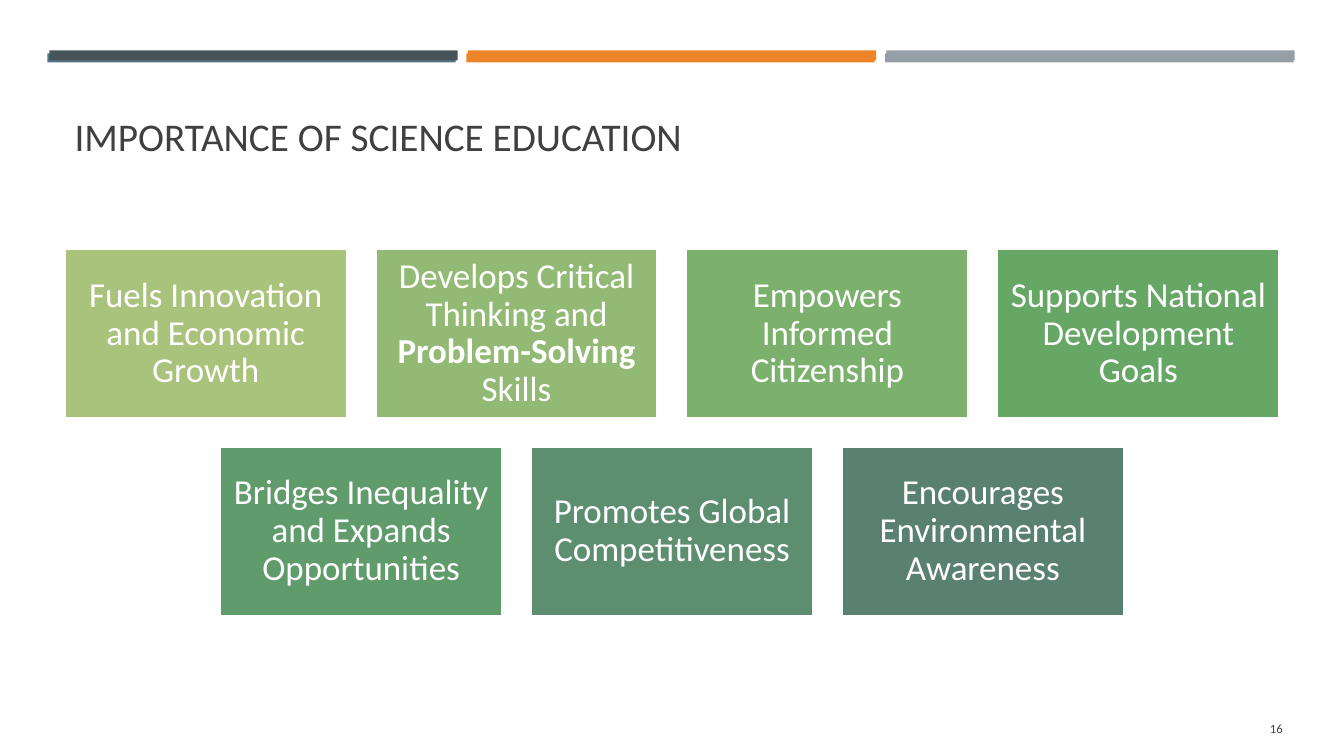
"""Builds the slide on the importance of science education."""
import dataclasses

import pptx
import pptx.dml.color
import pptx.enum.shapes
import pptx.enum.text
import pptx.util

ALIGN = pptx.enum.text.PP_ALIGN
ANCHOR = pptx.enum.text.MSO_ANCHOR


@dataclasses.dataclass(frozen=True)
class Theme:
    """Holds the colours, font and type sizes."""
    font: str = "Calibri"
    ink: str = "404040"
    paper: str = "FFFFFF"
    back_bars: tuple = ("537685", "ED8428", "969FA7")
    front_bars: tuple = ("465359", "ED8428", "969FA7")
    cards: tuple = ("A9C37C", "92BA74", "7BB16C", "66A765", "609C6B", "5D8E70", "5A8071")
    title_size: int = 28
    card_size: int = 25
    number_size: int = 9
    outline: float = 1.75


@dataclasses.dataclass(frozen=True)
class Grid:
    """Places equal cells, with all lengths in inches."""
    left: float
    top: float
    right: float
    columns: int
    width: float
    height: float
    row_gap: float = 0

    def cell(self, column, row=0):
        """Returns the left, top, width and height of a cell."""
        column_step = (self.right - self.left - self.width) / (self.columns - 1)
        return (self.left + column * column_step,
                self.top + row * (self.height + self.row_gap), self.width, self.height)


class SlideBuilder:
    """Draws styled elements on the current slide."""

    def __init__(self, presentation, theme):
        """Adds a title-only slide."""
        self.theme = theme
        self.slide = presentation.slides.add_slide(presentation.slide_layouts[5])

    def style_frame(self, frame, size, colour, alignment, anchor, inset):
        """Applies the type style to a text frame."""
        frame.word_wrap = True
        frame.auto_size = pptx.enum.text.MSO_AUTO_SIZE.NONE
        frame.vertical_anchor = anchor
        frame.margin_left = frame.margin_right = pptx.util.Inches(0.1)
        frame.margin_top = frame.margin_bottom = pptx.util.Inches(inset)
        for paragraph in frame.paragraphs:
            paragraph.alignment = alignment
            for run in paragraph.runs:
                run.font.name = self.theme.font
                run.font.size = pptx.util.Pt(size)
                run.font.color.rgb = pptx.dml.color.RGBColor.from_string(colour)

    def rectangle(self, box, colour):
        """Draws a flat rectangle without an outline."""
        shape = self.slide.shapes.add_shape(
            pptx.enum.shapes.MSO_SHAPE.RECTANGLE, *map(pptx.util.Inches, box))
        shape.shadow.inherit = False
        shape.fill.solid()
        shape.fill.fore_color.rgb = pptx.dml.color.RGBColor.from_string(colour)
        shape.line.fill.background()
        return shape

    def bars(self, grid, colours):
        """Draws a strip of coloured bars."""
        for column, colour in enumerate(colours):
            self.rectangle(grid.cell(column), colour)

    def card(self, box, colour, text):
        """Draws a card whose text between asterisks is bold."""
        shape = self.rectangle(box, colour)
        shape.line.color.rgb = pptx.dml.color.RGBColor.from_string(self.theme.paper)
        shape.line.width = pptx.util.Pt(self.theme.outline)
        paragraph = shape.text_frame.paragraphs[0]
        paragraph.line_spacing = 0.9
        for index, part in enumerate(text.split("*")):
            run = paragraph.add_run()
            run.text = part
            run.font.bold = index % 2 == 1
        self.style_frame(shape.text_frame, self.theme.card_size, self.theme.paper,
                         ALIGN.CENTER, ANCHOR.MIDDLE, 0.1)

    def title(self, box, text):
        """Moves and fills the title placeholder."""
        shape = self.slide.shapes.title
        shape.left, shape.top, shape.width, shape.height = map(pptx.util.Inches, box)
        shape.text_frame.text = text
        self.style_frame(shape.text_frame, self.theme.title_size, self.theme.ink,
                         ALIGN.LEFT, ANCHOR.BOTTOM, 0.49)

    def page_number(self, box, text):
        """Writes the page number."""
        shape = self.slide.shapes.add_textbox(*map(pptx.util.Inches, box))
        shape.text_frame.text = text
        self.style_frame(shape.text_frame, self.theme.number_size, self.theme.ink,
                         ALIGN.RIGHT, ANCHOR.MIDDLE, 0.05)


CARD_ROWS = (
    ("Fuels Innovation and Economic Growth",
     "Develops Critical Thinking and *Problem-Solving* Skills",
     "Empowers Informed Citizenship",
     "Supports National Development Goals"),
    ("Bridges Inequality and Expands Opportunities",
     "Promotes Global Competitiveness",
     "Encourages Environmental Awareness"),
)


def main():
    """Builds and saves the presentation."""
    presentation = pptx.Presentation()
    presentation.slide_width = pptx.util.Inches(13.33)
    presentation.slide_height = pptx.util.Inches(7.5)
    theme = Theme()
    builder = SlideBuilder(presentation, theme)

    builder.bars(Grid(0.47, 0.53, 12.83, 3, 4.05, 0.09), theme.back_bars)
    builder.bars(Grid(0.49, 0.5, 12.84, 3, 4.05, 0.1), theme.front_bars)
    builder.title((0.64, 0.77, 12.06, 1.3), "IMPORTANCE OF SCIENCE EDUCATION")

    grid = Grid(0.64, 2.47, 12.69, 4, 2.8, 1.68, row_gap=0.28)
    colours = iter(theme.cards)
    for row, texts in enumerate(CARD_ROWS):
        indent = (grid.columns - len(texts)) / 2
        for column, text in enumerate(texts):
            builder.card(grid.cell(column + indent, row), next(colours), text)

    builder.page_number((11.67, 7.03, 1.15, 0.4), "16")
    presentation.save("out.pptx")


if __name__ == "__main__":
    main()
